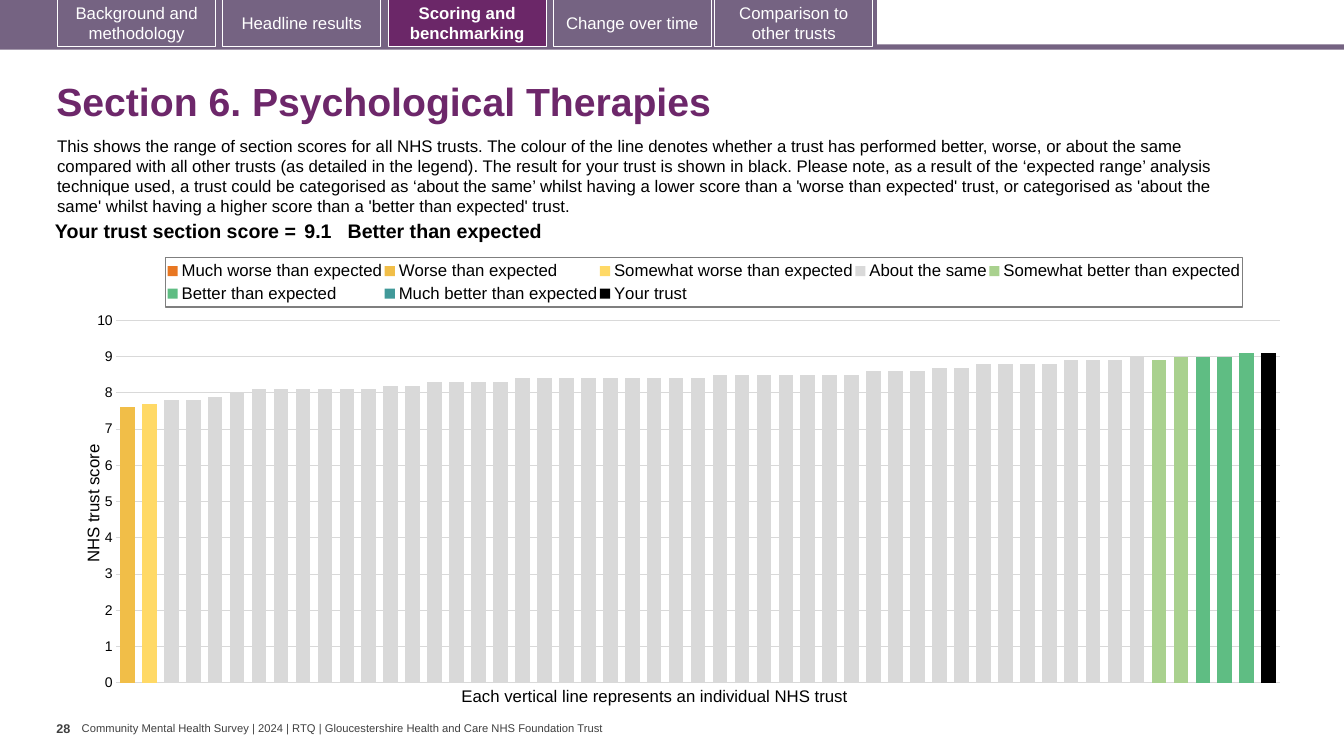
import copy

import pptx
import pptx.chart.data
import pptx.dml.color
import pptx.enum.chart
import pptx.enum.shapes
import pptx.enum.text
import pptx.oxml
import pptx.oxml.ns
import pptx.util

Cm, Pt = pptx.util.Cm, pptx.util.Pt
PP_ALIGN, MSO_ANCHOR = pptx.enum.text.PP_ALIGN, pptx.enum.text.MSO_ANCHOR
qn = pptx.oxml.ns.qn
FONT = "Arial"
TABS = [  # left edge, label
    (1.45, "Background and methodology"),
    (5.61, "Headline results"),
    (9.78, "Scoring and benchmarking"),
    (13.94, "Change over time"),
    (18.01, "Comparison to other trusts"),
]
ACTIVE_TAB = "Scoring and benchmarking"
INTRO = (
    "This shows the range of section scores for all NHS trusts. The colour of the line denotes "
    "whether a trust has performed better, worse, or about the same compared with all other trusts "
    "(as detailed in the legend). The result for your trust is shown in black. Please note, as a "
    "result of the ‘expected range’ analysis technique used, a trust could be categorised as ‘about "
    "the same’ whilst having a lower score than a 'worse than expected' trust, or categorised as "
    "'about the same' whilst having a higher score than a 'better than expected' trust."
)
TRUST_COUNT = 53
ABOUT_THE_SAME = [
    7.8, 7.8, 7.9, 8, *[8.1] * 6, 8.2, 8.2, *[8.3] * 4, *[8.4] * 9, *[8.5] * 7,
    *[8.6] * 3, 8.7, 8.7, *[8.8] * 4, *[8.9] * 3, 9,
]
BANDS = [  # name, colour, index of first trust, scores
    ("Much worse than expected", "E87722", 0, []),
    ("Worse than expected", "F1BE48", 0, [7.6]),
    ("Somewhat worse than expected", "FFD966", 1, [7.7]),
    ("About the same", "D9D9D9", 2, ABOUT_THE_SAME),
    ("Somewhat better than expected", "A9D18E", 47, [8.9, 9]),
    ("Better than expected", "5FBD83", 49, [9, 9, 9.1, 9.1]),
    ("Much better than expected", "419999", 0, []),
    ("Your trust", "000000", 52, [9.1]),
]


def rgb(value):
    return pptx.dml.color.RGBColor.from_string(value)


def style(font, size, color="000000", bold=False):
    font.name, font.size, font.bold = FONT, Pt(size), bold
    font.color.rgb = rgb(color)


def add_run(p, text, size, color="000000", bold=False):
    r = p.add_run()
    r.text = text
    style(r.font, size, color, bold)


def add_text(s, box, text, size, color="000000", bold=False, wrap=True,
             anchor=MSO_ANCHOR.TOP, insets=(0.25, 0.13)):
    tf = s.shapes.add_textbox(*map(Cm, box)).text_frame
    tf.word_wrap, tf.vertical_anchor = wrap, anchor
    tf.margin_left = tf.margin_right = Cm(insets[0])
    tf.margin_top = tf.margin_bottom = Cm(insets[1])
    add_run(tf.paragraphs[0], text, size, color, bold)
    return tf


def add_rect(s, box, fill):
    sp = s.shapes.add_shape(pptx.enum.shapes.MSO_SHAPE.RECTANGLE, *map(Cm, box))
    sp.shadow.inherit = False
    sp.fill.solid()
    sp.fill.fore_color.rgb = rgb(fill)
    sp.line.fill.background()
    return sp


def add_navigation(s, box):
    left, top, width, height = box
    add_rect(s, (left, top + height - 0.13, width, 0.13), "756382")
    add_rect(s, (left, top, 22.1, height - 0.05), "756382")
    for x, label in TABS:
        active = label == ACTIVE_TAB
        sp = add_rect(s, (left + x, top, 3.99, height - 0.08), "6B2768" if active else "756382")
        sp.line.color.rgb, sp.line.width = rgb("FFFFFF"), Pt(0.75)
        tf = sp.text_frame
        tf.word_wrap, tf.vertical_anchor = True, MSO_ANCHOR.MIDDLE
        p = tf.paragraphs[0]
        p.alignment = PP_ALIGN.CENTER
        add_run(p, label, 12, "FFFFFF", active)


def add_heading(s, box):
    left, top, width, _ = box
    tf = add_text(s, (left, top, width, 1.83), "Section 6. Psychological Therapies", 28,
                  "6D276A", True, anchor=MSO_ANCHOR.MIDDLE)
    tf.paragraphs[0].line_spacing = 0.9
    add_text(s, (left + 0.02, top + 1.58, 30.81, 2.31), INTRO, 12)


def add_score(s, box):
    table = s.shapes.add_table(1, 3, *map(Cm, box)).table
    table.first_row = table.horz_banding = False
    cells = [  # text, width, side margin, alignment
        ("Your trust section score =", 6.68, 0.1, PP_ALIGN.RIGHT),
        ("9.1", 1.19, 0.1, PP_ALIGN.LEFT),
        ("Better than expected", 21.82, 0, PP_ALIGN.LEFT),
    ]
    for i, (text, width, margin, align) in enumerate(cells):
        table.columns[i].width = Cm(width)
        cell = table.cell(0, i)
        cell.fill.background()
        cell.margin_left = cell.margin_right = Cm(margin)
        cell.margin_top = cell.margin_bottom = Cm(0.1)
        p = cell.text_frame.paragraphs[0]
        p.alignment = align
        add_run(p, text, 14, bold=True)


def chart_xml(body):
    return pptx.oxml.parse_xml(
        '<c:root xmlns:c="http://schemas.openxmlformats.org/drawingml/2006/chart" '
        'xmlns:a="http://schemas.openxmlformats.org/drawingml/2006/main">' + body + "</c:root>")[0]


def set_layout(parent, after, inner=False, **fractions):
    """Place a chart part by fractions of the chart, following the child named after."""
    for old in parent.findall(qn("c:layout")):
        parent.remove(old)
    body = '<c:layoutTarget val="inner"/>' if inner else ""
    body += "".join(f'<c:{k}Mode val="edge"/>' for k in "xy")
    body += "".join(f'<c:{k} val="{v}"/>' for k, v in fractions.items())
    index = parent.index(parent.find(qn(after))) + 1 if after else 0
    parent.insert(index, chart_xml(f"<c:layout><c:manualLayout>{body}</c:manualLayout></c:layout>"))


def move_last_series_to_right_axis(plot_area):
    bars = plot_area.find(qn("c:barChart"))
    right_bars = copy.deepcopy(bars)
    bars.remove(bars.findall(qn("c:ser"))[-1])
    for ser in right_bars.findall(qn("c:ser"))[:-1]:
        right_bars.remove(ser)
    bars.addnext(right_bars)
    cat_ax, val_ax = plot_area.find(qn("c:catAx")), plot_area.find(qn("c:valAx"))
    right_cat, right_val = copy.deepcopy(cat_ax), copy.deepcopy(val_ax)
    val_ax.addnext(right_cat)
    right_cat.addnext(right_val)
    for ax, ax_id, cross_id in ((right_cat, "5001", "5002"), (right_val, "5002", "5001")):
        ax.find(qn("c:axId")).set("val", ax_id)
        ax.find(qn("c:crossAx")).set("val", cross_id)
    for ref, ax_id in zip(right_bars.findall(qn("c:axId")), ("5001", "5002")):
        ref.set("val", ax_id)
    for tag in ("c:majorGridlines", "c:title"):
        right_val.remove(right_val.find(qn(tag)))
    for tag, value in (("c:axPos", "r"), ("c:tickLblPos", "none"), ("c:crosses", "max")):
        right_val.find(qn(tag)).set("val", value)


def add_score_chart(s, box):
    data = pptx.chart.data.CategoryChartData()
    data.categories = [str(i + 1) for i in range(TRUST_COUNT)]
    for name, _, start, scores in BANDS:
        rest = TRUST_COUNT - start - len(scores)
        data.add_series(name, [None] * start + scores + [None] * rest)
    kind = pptx.enum.chart.XL_CHART_TYPE.COLUMN_CLUSTERED
    chart = s.shapes.add_chart(kind, *map(Cm, box), data).chart
    chart.has_title = False
    chart.font.name, chart.font.size = "Calibri", Pt(10)
    plot = chart.plots[0]
    plot.gap_width, plot.overlap, plot.vary_by_categories = 50, 100, False
    for series, (_, color, _, _) in zip(plot.series, BANDS):
        series.format.fill.solid()
        series.format.fill.fore_color.rgb = rgb(color)

    chart.category_axis.visible = False
    axis = chart.value_axis
    axis.minimum_scale, axis.maximum_scale, axis.major_unit = 0, 10, 1
    axis.major_tick_mark = pptx.enum.chart.XL_TICK_MARK.NONE
    axis.format.line.fill.background()
    grid = axis.major_gridlines.format.line
    grid.color.rgb, grid.width = rgb("D9D9D9"), Pt(0.75)
    style(axis.tick_labels.font, 10)
    add_run(axis.axis_title.text_frame.paragraphs[0], "NHS trust score", 12)
    plot_area = chart.element.find(".//" + qn("c:plotArea")) if hasattr(chart, "element") \
        else axis._element.getparent()
    title = plot_area.find(qn("c:valAx")).find(qn("c:title"))
    title.find(".//" + qn("a:bodyPr")).set("rot", "-5400000")
    set_layout(title, "c:tx", x=0.01, y=0.43)

    chart.has_legend = True
    legend = chart.legend
    legend.position = pptx.enum.chart.XL_LEGEND_POSITION.TOP
    legend.include_in_layout = False
    style(legend.font, 12)
    root = plot_area.getparent().find(qn("c:legend"))
    set_layout(root, "c:legendPos", x=0.08, y=0.02, w=0.88, h=0.11)
    root.find(qn("c:txPr")).addprevious(chart_xml(
        '<c:spPr><a:ln w="9525"><a:solidFill><a:srgbClr val="7F7F7F"/></a:solidFill></a:ln></c:spPr>'))
    set_layout(plot_area, None, True, x=0.04, y=0.16, w=0.95, h=0.81)
    move_last_series_to_right_axis(plot_area)


def add_footer(s, box):
    left, top, width, height = box
    add_text(s, (left, top, 0.64, height), "28", 9, "404040", True, False, insets=(0, 0.13))
    add_text(s, (left + 0.64, top + 0.15, width - 0.64, 0.33),
             "Community Mental Health Survey | 2024 | RTQ | "
             "Gloucestershire Health and Care NHS Foundation Trust",
             8, "404040", wrap=False, anchor=MSO_ANCHOR.MIDDLE, insets=(0, 0))


def main():
    prs = pptx.Presentation()
    prs.slide_width, prs.slide_height = Cm(33.87), Cm(19.05)
    s = prs.slides.add_slide(prs.slide_layouts[6])
    add_navigation(s, (0, 0, 33.87, 1.25))
    add_heading(s, (1.17, 1.7, 31.72, 3.89))
    add_score_chart(s, (1.7, 6.27, 30.86, 11.28))
    add_text(s, (11.38, 17.15, 10.44, 0.76),
             "Each vertical line represents an individual NHS trust", 12, wrap=False)
    add_score(s, (0.89, 5.46, 29.69, 0.78))
    add_footer(s, (1.42, 18.03, 13.95, 1.02))
    prs.save("out.pptx")


if __name__ == "__main__":
    main()
